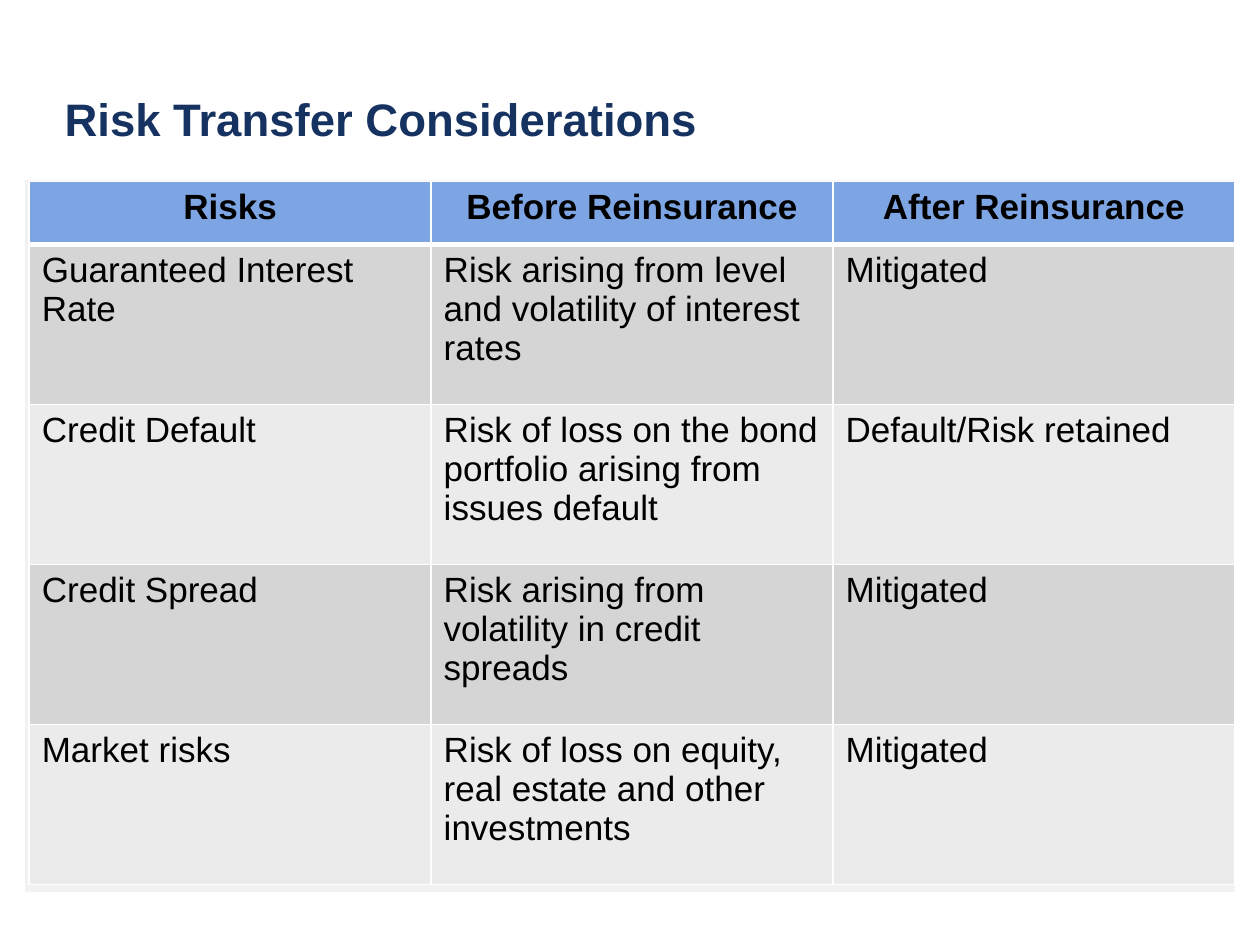
from dataclasses import dataclass

from lxml import etree
from pptx import Presentation
from pptx.dml.color import RGBColor
from pptx.enum import shapes, text
from pptx.oxml import ns
from pptx.util import Pt


@dataclass(frozen=True)
class Theme:
    font: str = "Arial"
    title_size: float = 26
    table_size: float = 20
    title: str = "153260"
    ink: str = "000000"
    panel: str = "F2F2F2"
    header: str = "7EA5E3"
    bands: tuple = ("D5D5D5", "EBEBEB")
    border: str = "FFFFFF"
    thin: float = 1
    thick: float = 3


THEME = Theme()
RISK_ROWS = [
    ("Risks", "Before Reinsurance", "After Reinsurance"),
    ("Guaranteed Interest Rate",
     "Risk arising from level and volatility of interest rates", "Mitigated"),
    ("Credit Default",
     "Risk of loss on the bond portfolio arising from issues default",
     "Default/Risk retained"),
    ("Credit Spread", "Risk arising from volatility in credit spreads", "Mitigated"),
    ("Market risks",
     "Risk of loss on equity, real estate and other investments", "Mitigated"),
]


def apply_format(target, values):
    for name, value in values.items():
        setattr(target, name, value)


def write_text(paragraph, words, size, color, bold):
    run = paragraph.add_run()
    run.text = words
    apply_format(run.font, {"name": THEME.font, "size": Pt(size), "bold": bold})
    run.font.color.rgb = RGBColor.from_string(color)


def set_borders(cell, widths):
    properties = cell._tc.get_or_add_tcPr()
    for side, width in widths.items():
        line = etree.SubElement(properties, ns.qn(f"a:ln{side}"), w=str(Pt(width)))
        fill = etree.SubElement(line, ns.qn("a:solidFill"))
        etree.SubElement(fill, ns.qn("a:srgbClr"), val=THEME.border)


def add_panel(slide, left, top, width, height):
    panel = slide.shapes.add_shape(
        shapes.MSO_SHAPE.RECTANGLE, Pt(left), Pt(top), Pt(width), Pt(height))
    panel.shadow.inherit = False
    panel.fill.solid()
    panel.fill.fore_color.rgb = RGBColor.from_string(THEME.panel)
    panel.line.fill.background()


def add_title(slide, left, top, width, height):
    title = slide.shapes.add_textbox(Pt(left), Pt(top), Pt(width), Pt(height))
    frame = title.text_frame
    apply_format(frame, {
        "word_wrap": True, "vertical_anchor": text.MSO_ANCHOR.MIDDLE,
        "margin_left": 0, "margin_top": 0, "margin_right": 0, "margin_bottom": 0})
    write_text(frame.paragraphs[0], "Risk Transfer Considerations",
               THEME.title_size, THEME.title, True)


def add_risk_table(slide, left, top, width, height, header_height):
    row_count, column_count = len(RISK_ROWS), len(RISK_ROWS[0])
    table = slide.shapes.add_table(
        row_count, column_count, Pt(left), Pt(top), Pt(width), Pt(height)).table
    for column in table.columns:
        column.width = Pt(width / column_count)
    body_height = (height - header_height) / (row_count - 1)
    for row_index, words in enumerate(RISK_ROWS):
        is_header = row_index == 0
        table.rows[row_index].height = Pt(header_height if is_header else body_height)
        color = THEME.header if is_header else THEME.bands[(row_index - 1) % 2]
        borders = {"L": THEME.thin, "R": THEME.thin,
                   "T": THEME.thick if row_index == 1 else THEME.thin,
                   "B": THEME.thick if is_header else THEME.thin}
        for cell, cell_words in zip(table.rows[row_index].cells, words):
            set_borders(cell, borders)
            cell.fill.solid()
            cell.fill.fore_color.rgb = RGBColor.from_string(color)
            paragraph = cell.text_frame.paragraphs[0]
            if is_header:
                paragraph.alignment = text.PP_ALIGN.CENTER
            write_text(paragraph, cell_words, THEME.table_size, THEME.ink, is_header)


def main():
    presentation = Presentation()
    apply_format(presentation, {"slide_width": Pt(720), "slide_height": Pt(540)})
    slide = presentation.slides.add_slide(presentation.slide_layouts[6])
    add_panel(slide, 14.4, 103, 691.2, 406.8)
    add_title(slide, 36.9, 49, 510.5, 36.7)
    add_risk_table(slide, 16.7, 103.6, 689, 401.8, header_height=36)
    presentation.save("out.pptx")


if __name__ == "__main__":
    main()
